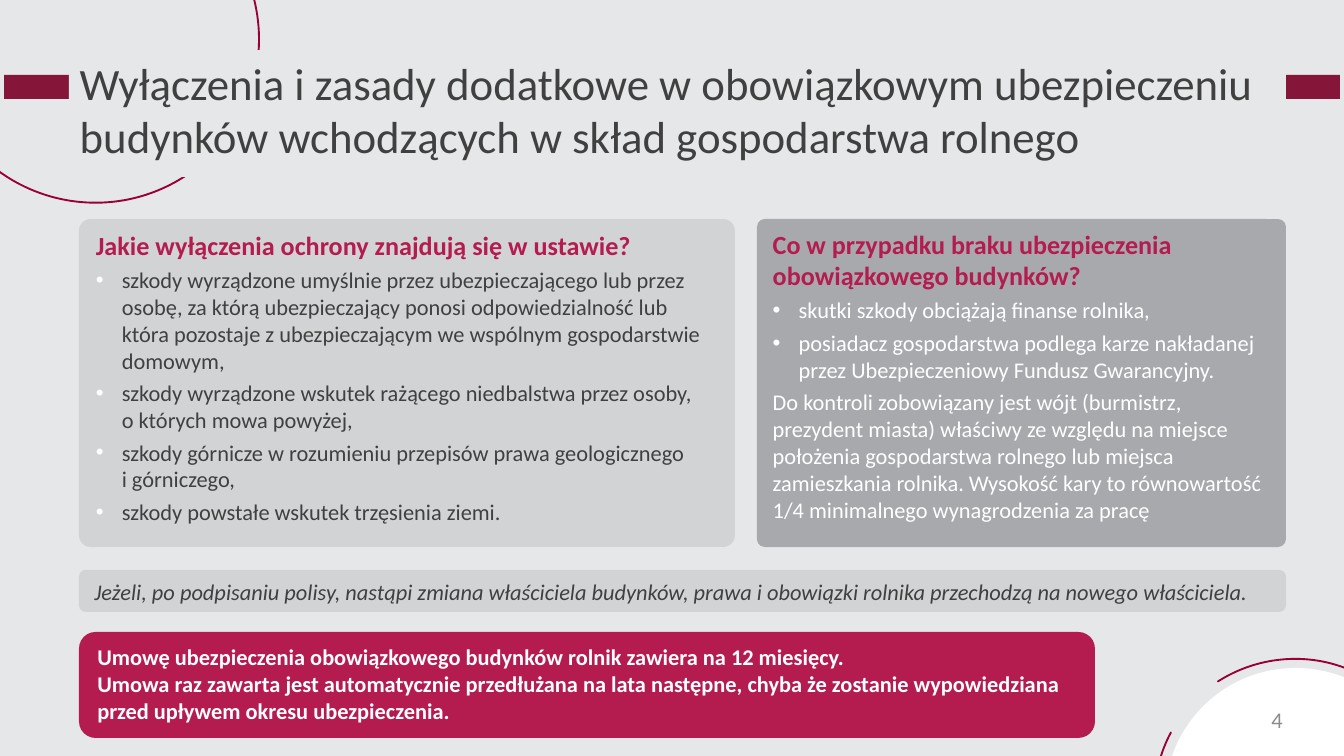
from lxml import etree
from pptx import Presentation
from pptx import util as u
from pptx.dml import color
from pptx.enum import shapes, text
from pptx.oxml import ns

EMU_PER_PX = 914400 / 134.4
FONT = "Calibri"
BACKGROUND, LIGHT, MID = "E6E7E9", "D2D3D5", "A8A9AD"
MAROON, LINE_RED, CRIMSON = "86153A", "990033", "B41C4F"
WHITE, DARK, PALE_TEXT = "FFFFFF", "404040", "8C8C8C"
LEFT, PANEL_TOP, PANEL_HEIGHT = 79, 219, 328

TITLE = ("Wyłączenia i zasady dodatkowe w obowiązkowym ubezpieczeniu "
         "budynków wchodzących w skład gospodarstwa rolnego")
EXCLUSIONS_HEADING = "Jakie wyłączenia ochrony znajdują się w ustawie?"
EXCLUSIONS = [
    "szkody wyrządzone umyślnie przez ubezpieczającego lub przez osobę, "
    "za którą ubezpieczający ponosi odpowiedzialność lub która pozostaje "
    "z ubezpieczającym we wspólnym gospodarstwie domowym,",
    "szkody wyrządzone wskutek rażącego niedbalstwa przez osoby,\n"
    "o których mowa powyżej,",
    "szkody górnicze w rozumieniu przepisów prawa geologicznego\n"
    "i górniczego,",
    "szkody powstałe wskutek trzęsienia ziemi.",
]
PENALTY_HEADING = "Co w przypadku braku ubezpieczenia obowiązkowego budynków?"
PENALTIES = [
    "skutki szkody obciążają finanse rolnika,",
    "posiadacz gospodarstwa podlega karze nakładanej przez "
    "Ubezpieczeniowy Fundusz Gwarancyjny.",
]
CONTROL = ("Do kontroli zobowiązany jest wójt (burmistrz, prezydent miasta) "
           "właściwy ze względu na miejsce położenia gospodarstwa rolnego lub "
           "miejsca zamieszkania rolnika. Wysokość kary to równowartość "
           "1/4 minimalnego wynagrodzenia za pracę")
OWNER_CHANGE = ("Jeżeli, po podpisaniu polisy, nastąpi zmiana właściciela budynków, "
                "prawa i obowiązki rolnika przechodzą na nowego właściciela.")
CONTRACT = ("Umowę ubezpieczenia obowiązkowego budynków rolnik zawiera na 12 miesięcy.\n"
            "Umowa raz zawarta jest automatycznie przedłużana na lata następne, "
            "chyba że zostanie wypowiedziana przed upływem okresu ubezpieczenia.")


def px(length):
    return u.Emu(round(length * EMU_PER_PX))


def rgb(value):
    return color.RGBColor.from_string(value)


def paint(shape, fill, line=None):
    shape.fill.solid()
    shape.fill.fore_color.rgb = rgb(fill)
    if line:
        shape.line.color.rgb = rgb(line)
        shape.line.width = u.Pt(1)
    else:
        shape.line.fill.background()


def add_decoration(slide, kind, box, fill, line=None, rotation=0):
    shape = slide.shapes.add_shape(kind, *map(px, box))
    shape.shadow.inherit = False
    shape.rotation = rotation
    paint(shape, fill, line)
    return shape


def add_arc(slide, box, rotation, start):
    arc = add_decoration(slide, shapes.MSO_SHAPE.BLOCK_ARC, box,
                         MAROON, LINE_RED, rotation)
    for index, value in enumerate((start, 1.759, 0)):
        arc.adjustments[index] = value


def set_bullet(paragraph, bulleted):
    """Give the paragraph a hanging white bullet, or none at all."""
    properties = paragraph._p.get_or_add_pPr()
    indent = px(26) if bulleted else 0
    properties.set("marL", str(indent))
    properties.set("indent", str(-indent))
    if bulleted:
        bullet_color = etree.SubElement(properties, ns.qn("a:buClr"))
        etree.SubElement(bullet_color, ns.qn("a:srgbClr"), val=WHITE)
        etree.SubElement(properties, ns.qn("a:buFont"), typeface="Arial")
        etree.SubElement(properties, ns.qn("a:buChar"), char="•")
    else:
        etree.SubElement(properties, ns.qn("a:buNone"))


def write(paragraph, content, size, hue, bold=False, italic=False,
          bulleted=False, space_before=3, align=text.PP_ALIGN.LEFT):
    paragraph.text = content
    paragraph.alignment = align
    paragraph.space_before = u.Pt(space_before)
    set_bullet(paragraph, bulleted)
    font = paragraph.font
    font.name, font.size = FONT, u.Pt(size)
    font.bold, font.italic = bold, italic
    font.color.rgb = rgb(hue)


def place(slide, placeholder, box, fill, corner=None):
    """Move a placeholder to the front and give it a fill and rounded corners."""
    slide.shapes._spTree.append(placeholder._element)
    placeholder.left, placeholder.top, placeholder.width, placeholder.height = map(px, box)
    if corner is not None:
        geometry = etree.SubElement(placeholder._element.spPr, ns.qn("a:prstGeom"),
                                    prst="roundRect")
        guides = etree.SubElement(geometry, ns.qn("a:avLst"))
        etree.SubElement(guides, ns.qn("a:gd"), name="adj",
                         fmla=f"val {round(corner * 100000)}")
    paint(placeholder, fill)
    frame = placeholder.text_frame
    frame.word_wrap = True
    frame.auto_size = text.MSO_AUTO_SIZE.NONE
    frame.vertical_anchor = text.MSO_ANCHOR.TOP
    frame.margin_left = frame.margin_right = u.Inches(0.1)
    frame.margin_top = frame.margin_bottom = u.Inches(0.05)
    return frame


def fill_panel(frame, heading, bullets, hue, closing=None):
    write(frame.paragraphs[0], heading, 14, CRIMSON, bold=True)
    for bullet in bullets:
        write(frame.add_paragraph(), bullet, 12, hue, bulleted=True)
    if closing:
        write(frame.add_paragraph(), closing, 12, hue)


def add_background(slide):
    slide.background.fill.solid()
    slide.background.fill.fore_color.rgb = rgb(BACKGROUND)
    add_arc(slide, (-69, -125, 328, 329), 12.3, 170.455)
    add_arc(slide, (-69, -126, 328, 329), 132.3, 155.787)
    add_decoration(slide, shapes.MSO_SHAPE.RECTANGLE, (4, 75, 1336, 24), MAROON)
    add_arc(slide, (1154, 661, 284, 277), 205.2, 170.455)
    add_arc(slide, (1150, 660, 284, 277), 325.2, 163.482)
    add_decoration(slide, shapes.MSO_SHAPE.OVAL, (1165, 668, 261, 261), WHITE)


def add_page_number(slide, number):
    box = slide.shapes.add_textbox(*map(px, (1111, 700, 185, 40)))
    frame = box.text_frame
    frame.word_wrap = True
    frame.vertical_anchor = text.MSO_ANCHOR.MIDDLE
    write(frame.paragraphs[0], number, 12, PALE_TEXT, space_before=0,
          align=text.PP_ALIGN.RIGHT)


def main():
    presentation = Presentation()
    presentation.slide_width, presentation.slide_height = px(1344), px(756)
    comparison_layout = presentation.slide_layouts[4]
    slide = presentation.slides.add_slide(comparison_layout)
    title, exclusions, penalties, owner_change, contract = slide.placeholders

    add_background(slide)
    add_page_number(slide, "4")

    frame = place(slide, title, (69, 50, 1217, 127), BACKGROUND)
    frame.margin_left = frame.margin_right = u.Inches(0.08)
    frame.margin_top = u.Inches(0.04)
    write(frame.paragraphs[0], TITLE, 24, DARK, space_before=0)

    frame = place(slide, exclusions, (LEFT, PANEL_TOP, 656, PANEL_HEIGHT), LIGHT, 0.036)
    fill_panel(frame, EXCLUSIONS_HEADING, EXCLUSIONS, DARK)

    frame = place(slide, penalties, (757, PANEL_TOP, 529, PANEL_HEIGHT), MID, 0.024)
    fill_panel(frame, PENALTY_HEADING, PENALTIES, WHITE, CONTROL)

    frame = place(slide, owner_change, (LEFT, 570, 1207, 42), LIGHT, 0.156)
    write(frame.paragraphs[0], OWNER_CHANGE, 12, DARK, italic=True)

    frame = place(slide, contract, (LEFT, 632, 1016, 106), CRIMSON, 0.156)
    write(frame.paragraphs[0], CONTRACT, 12, WHITE, bold=True)

    presentation.save("out.pptx")


if __name__ == "__main__":
    main()
